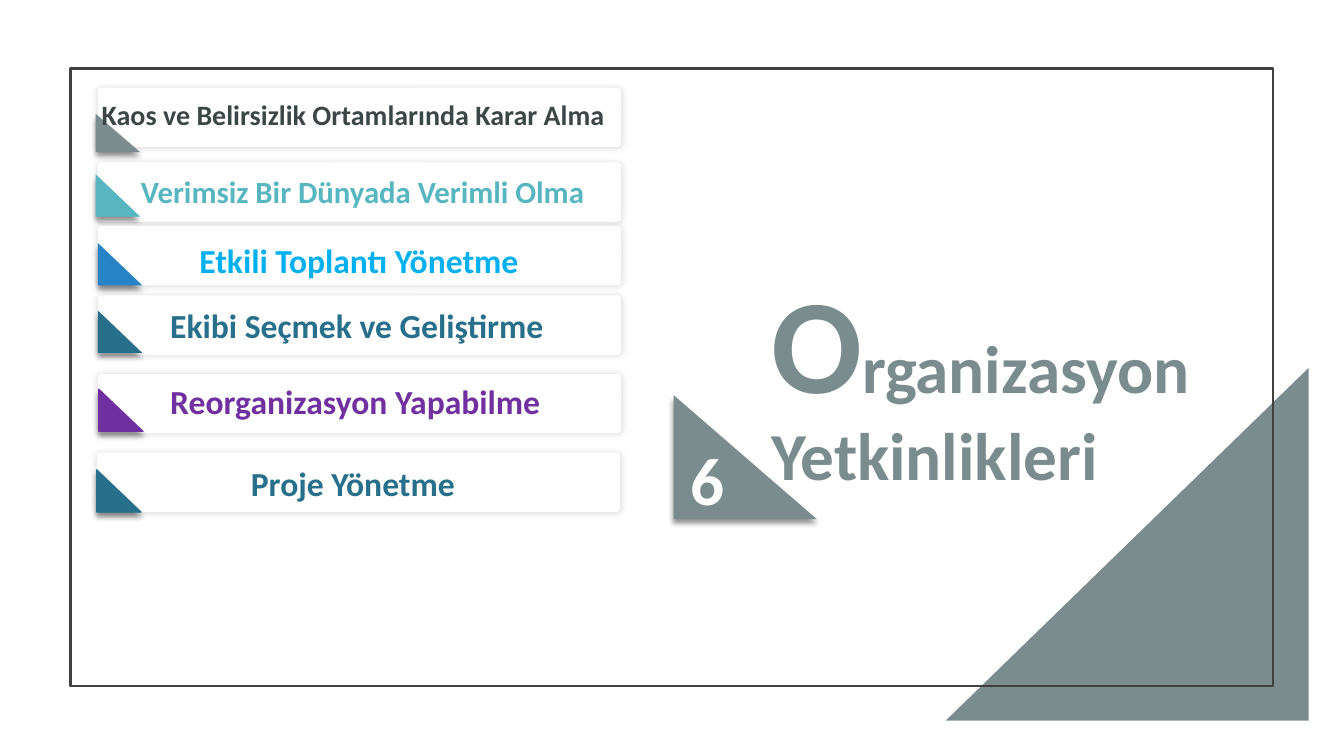
from dataclasses import dataclass

import pptx
import pptx.dml.color
import pptx.enum.shapes
import pptx.enum.text
import pptx.oxml
import pptx.oxml.ns
import pptx.shapes.autoshape
import pptx.slide
import pptx.text.text
import pptx.util

EMU_PER_PX = 9144
SHAPE = pptx.enum.shapes.MSO_SHAPE


@dataclass(frozen=True)
class Theme:
    font: str = "Calibri"
    white: str = "FFFFFF"
    slate: str = "7A8C8E"
    frame: str = "404040"
    charcoal: str = "3D4647"
    teal: str = "58B6C0"
    blue: str = "2683C6"
    sky: str = "00B0F0"
    petrol: str = "276F8B"
    purple: str = "7030A0"
    initial_size: int = 96
    title_size: int = 48
    skill_size: int = 24
    long_skill_size: int = 22
    longest_skill_size: int = 20


@dataclass(frozen=True)
class Box:
    left: int
    top: int
    width: int
    height: int

    def emu(self) -> tuple[int, int, int, int]:
        return tuple(side * EMU_PER_PX for side in
                     (self.left, self.top, self.width, self.height))


@dataclass(frozen=True)
class Shadow:
    alpha: int
    blur: int
    distance: int = 0
    angle: int = 0


@dataclass(frozen=True)
class Skill:
    text: str
    card: tuple[int, int]
    corner: Box
    corner_color: str
    label: Box
    label_color: str
    size: int
    outlined: bool = False


THEME = Theme()
CARD_SHADOW = Shadow(14, 5)
CORNER_SHADOW = Shadow(43, 4, 3, 90)

SKILLS = [
    Skill("Kaos ve Belirsizlik Ortamlarında Karar Alma", (97, 87),
          Box(95, 113, 44, 38), THEME.slate, Box(91, 92, 577, 44),
          THEME.charcoal, THEME.longest_skill_size),
    Skill("Verimsiz Bir Dünyada Verimli Olma", (97, 161),
          Box(95, 173, 44, 42), THEME.teal, Box(130, 166, 536, 47),
          THEME.teal, THEME.long_skill_size),
    Skill("Etkili Toplantı Yönetme", (97, 224),
          Box(97, 241, 44, 42), THEME.blue, Box(188, 233, 416, 50),
          THEME.sky, THEME.skill_size),
    Skill("Ekibi Seçmek ve Geliştirme", (97, 293),
          Box(97, 308, 44, 42), THEME.petrol, Box(159, 298, 416, 50),
          THEME.petrol, THEME.skill_size),
    Skill("Reorganizasyon Yapabilme", (97, 371),
          Box(98, 386, 44, 42), THEME.purple, Box(159, 373, 440, 50),
          THEME.purple, THEME.skill_size, outlined=True),
    Skill("Proje Yönetme", (96, 449),
          Box(96, 466, 44, 42), THEME.petrol, Box(239, 454, 440, 50),
          THEME.petrol, THEME.skill_size, outlined=True),
]


def rgb(color: str) -> pptx.dml.color.RGBColor:
    return pptx.dml.color.RGBColor.from_string(color)


def cast_shadow(shape: pptx.shapes.autoshape.Shape, shadow: Shadow) -> None:
    """Put an outer shadow into the shape's empty effect list."""
    effects = shape._element.spPr.find(pptx.oxml.ns.qn("a:effectLst"))
    effects.append(pptx.oxml.parse_xml(
        f'<a:outerShdw {pptx.oxml.ns.nsdecls("a")}'
        f' blurRad="{pptx.util.Pt(shadow.blur)}"'
        f' dist="{pptx.util.Pt(shadow.distance)}"'
        f' dir="{shadow.angle * 60000}" algn="ctr" rotWithShape="0">'
        f'<a:srgbClr val="000000"><a:alpha val="{shadow.alpha * 1000}"/>'
        '</a:srgbClr></a:outerShdw>'))


def add_figure(slide: pptx.slide.Slide, kind: SHAPE, box: Box,
               fill: str | None = None, line: str | None = None,
               line_width: float = 0.75, shadow: Shadow | None = None,
               ) -> pptx.shapes.autoshape.Shape:
    figure = slide.shapes.add_shape(kind, *box.emu())
    figure.shadow.inherit = False
    if fill:
        figure.fill.solid()
        figure.fill.fore_color.rgb = rgb(fill)
    else:
        figure.fill.background()
    if line:
        figure.line.color.rgb = rgb(line)
        figure.line.width = pptx.util.Pt(line_width)
    else:
        figure.line.fill.background()
    if shadow:
        cast_shadow(figure, shadow)
    return figure


def style_run(run: pptx.text.text._Run, size: int, color: str) -> None:
    run.font.name = THEME.font
    run.font.size = pptx.util.Pt(size)
    run.font.bold = True
    run.font.color.rgb = rgb(color)


def add_text(slide: pptx.slide.Slide, box: Box, text: str, size: int,
             color: str) -> pptx.text.text.TextFrame:
    frame = slide.shapes.add_textbox(*box.emu()).text_frame
    frame.word_wrap = True
    frame.text = text
    style_run(frame.paragraphs[0].runs[0], size, color)
    return frame


def add_title(slide: pptx.slide.Slide) -> None:
    title = add_text(slide, Box(755, 278, 480, 218), "O",
                     THEME.initial_size, THEME.slate)
    title.vertical_anchor = pptx.enum.text.MSO_ANCHOR.BOTTOM
    heading = title.paragraphs[0]
    heading.line_spacing = 0.9
    rest = heading.add_run()
    rest.text = "rganizasyon Yetkinlikleri"
    style_run(rest, THEME.title_size, THEME.slate)


def add_skill(slide: pptx.slide.Slide, skill: Skill) -> None:
    card = add_figure(slide, SHAPE.ROUNDED_RECTANGLE, Box(*skill.card, 519, 59),
                      fill=THEME.white, shadow=CARD_SHADOW)
    card.adjustments[0] = 0.07
    add_figure(slide, SHAPE.RIGHT_TRIANGLE, skill.corner, fill=skill.corner_color,
               line=skill.corner_color if skill.outlined else None,
               shadow=CORNER_SHADOW)
    add_text(slide, skill.label, skill.text, skill.size, skill.label_color)


def main() -> None:
    deck = pptx.Presentation()
    deck.slide_width = 1333 * EMU_PER_PX
    deck.slide_height = 750 * EMU_PER_PX
    slide = deck.slides.add_slide(deck.slide_layouts[6])

    page_corner = add_figure(slide, SHAPE.RIGHT_TRIANGLE,
                             Box(938, 365, 360, 350), fill=THEME.slate)
    page_corner._element.spPr.xfrm.set("flipH", "1")
    add_figure(slide, SHAPE.RECTANGLE, Box(70, 68, 1193, 613),
               line=THEME.frame, line_width=1.5)
    add_title(slide)
    for skill in SKILLS:
        add_skill(slide, skill)
    add_figure(slide, SHAPE.RIGHT_TRIANGLE, Box(668, 392, 142, 123),
               fill=THEME.slate, shadow=CORNER_SHADOW)
    add_text(slide, Box(675, 430, 60, 91), "6", THEME.title_size, THEME.white)

    deck.save("out.pptx")


if __name__ == "__main__":
    main()
